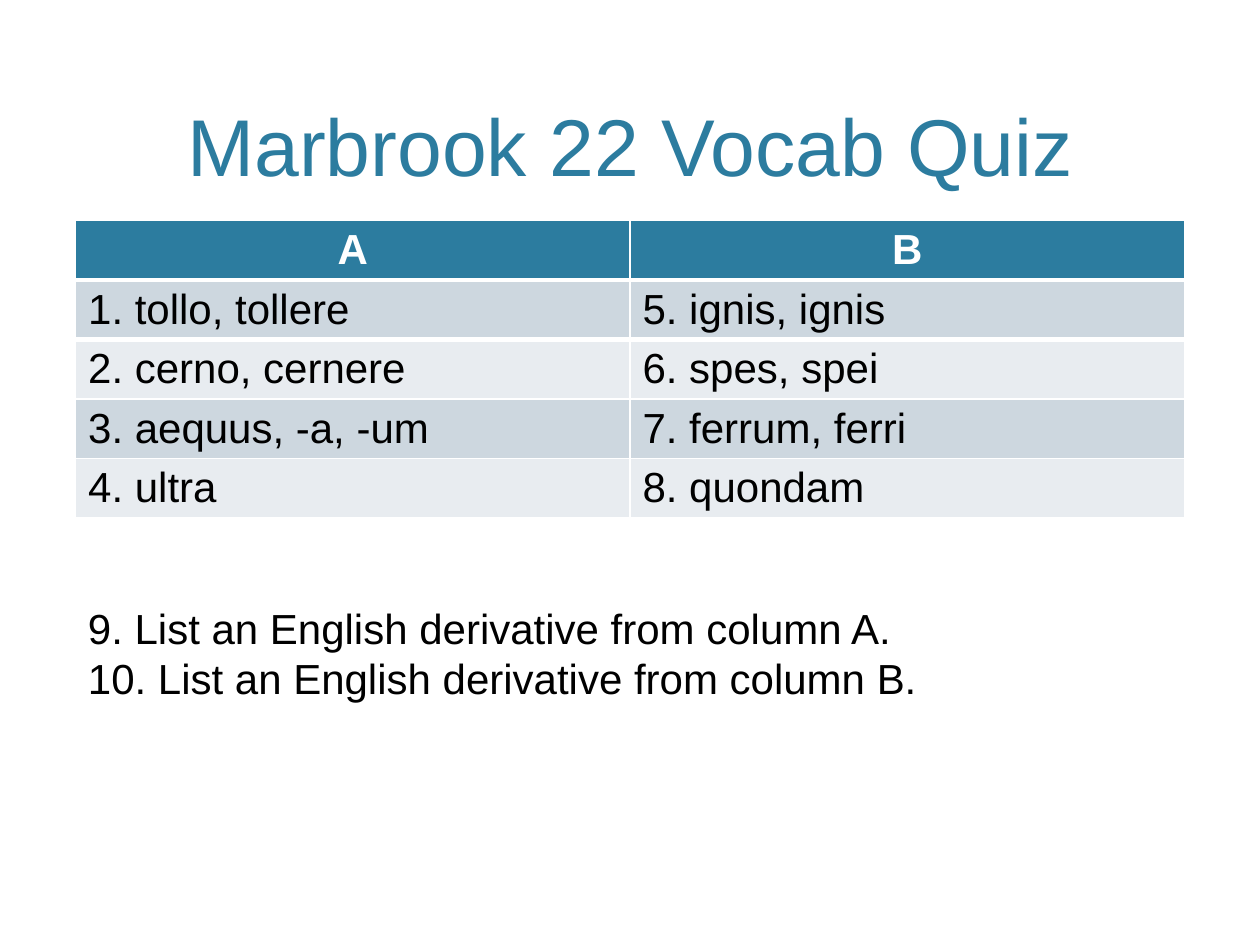
from lxml import etree
from pptx import Presentation
from pptx import util as u
from pptx.dml import color
from pptx.enum import text
from pptx.oxml import ns

TITLE = "Marbrook 22 Vocab Quiz"
VOCABULARY = [
    ("A", "B"),
    ("1. tollo, tollere", "5. ignis, ignis"),
    ("2. cerno, cernere", "6. spes, spei"),
    ("3. aequus, -a, -um", "7. ferrum, ferri"),
    ("4. ultra", "8. quondam"),
]
QUESTIONS = [
    "9. List an English derivative from column A.",
    "10. List an English derivative from column B.",
]
COLORS = {
    "accent": "2C7C9F",
    "dark_band": "CDD7DF",
    "light_band": "E8ECF0",
    "border": "FFFFFF",
    "header_text": "FFFFFF",
    "body_text": "000000",
}
FONT = "Arial"
TITLE_SIZE, BODY_SIZE = 46, 24
HEADER_RULE = 3
WIDTH, HEIGHT = u.Inches(10), u.Inches(7.5)
MARGIN = int(WIDTH * 0.06)
CONTENT_WIDTH = WIDTH - 2 * MARGIN
ROW_HEIGHT = u.Inches(0.47)


def rgb(name):
    return color.RGBColor.from_string(COLORS[name])


def format_text(text_frame, size, color_name, bold=False, alignment=text.PP_ALIGN.LEFT):
    for paragraph in text_frame.paragraphs:
        paragraph.alignment = alignment
        for run in paragraph.runs:
            run.font.name = FONT
            run.font.size = u.Pt(size)
            run.font.bold = bold
            run.font.color.rgb = rgb(color_name)


def add_border(cell, side, points):
    properties = cell._tc.get_or_add_tcPr()
    line = etree.Element(ns.qn(f"a:{side}"), w=str(u.Pt(points)))
    fill = etree.SubElement(line, ns.qn("a:solidFill"))
    etree.SubElement(fill, ns.qn("a:srgbClr"), val=COLORS["border"])
    properties.insert(0, line)


def add_title(slide):
    title = slide.shapes.title
    title.left, title.top = MARGIN, u.Inches(0.12)
    title.width, title.height = CONTENT_WIDTH, u.Inches(1.46)
    title.text_frame.text = TITLE
    title.text_frame.auto_size = text.MSO_AUTO_SIZE.NONE
    title.text_frame.vertical_anchor = text.MSO_ANCHOR.BOTTOM
    format_text(title.text_frame, TITLE_SIZE, "accent", alignment=text.PP_ALIGN.CENTER)


def add_vocabulary(slide):
    rows, columns = len(VOCABULARY), len(VOCABULARY[0])
    table = slide.shapes.add_table(
        rows, columns, MARGIN, u.Inches(1.75), CONTENT_WIDTH, ROW_HEIGHT * rows
    ).table
    for row, entries in enumerate(VOCABULARY):
        header = row == 0
        band = "accent" if header else "dark_band" if row % 2 else "light_band"
        text_color = "header_text" if header else "body_text"
        alignment = text.PP_ALIGN.CENTER if header else text.PP_ALIGN.LEFT
        for column, entry in enumerate(entries):
            cell = table.cell(row, column)
            cell.fill.solid()
            cell.fill.fore_color.rgb = rgb(band)
            cell.text_frame.text = entry
            format_text(cell.text_frame, BODY_SIZE, text_color, header, alignment)
            if header:
                add_border(cell, "lnB", HEADER_RULE)
            elif row == 1:
                add_border(cell, "lnT", HEADER_RULE)


def add_questions(slide):
    box = slide.shapes.add_textbox(MARGIN, u.Inches(4.73), CONTENT_WIDTH, u.Inches(0.91))
    box.text_frame.word_wrap = True
    box.text_frame.auto_size = text.MSO_AUTO_SIZE.SHAPE_TO_FIT_TEXT
    box.text_frame.text = "\n".join(QUESTIONS)
    format_text(box.text_frame, BODY_SIZE, "body_text")


def main():
    presentation = Presentation()
    presentation.slide_width, presentation.slide_height = WIDTH, HEIGHT
    slide = presentation.slides.add_slide(presentation.slide_layouts.get_by_name("Title Only"))
    add_title(slide)
    add_vocabulary(slide)
    add_questions(slide)
    presentation.save("out.pptx")


if __name__ == "__main__":
    main()
